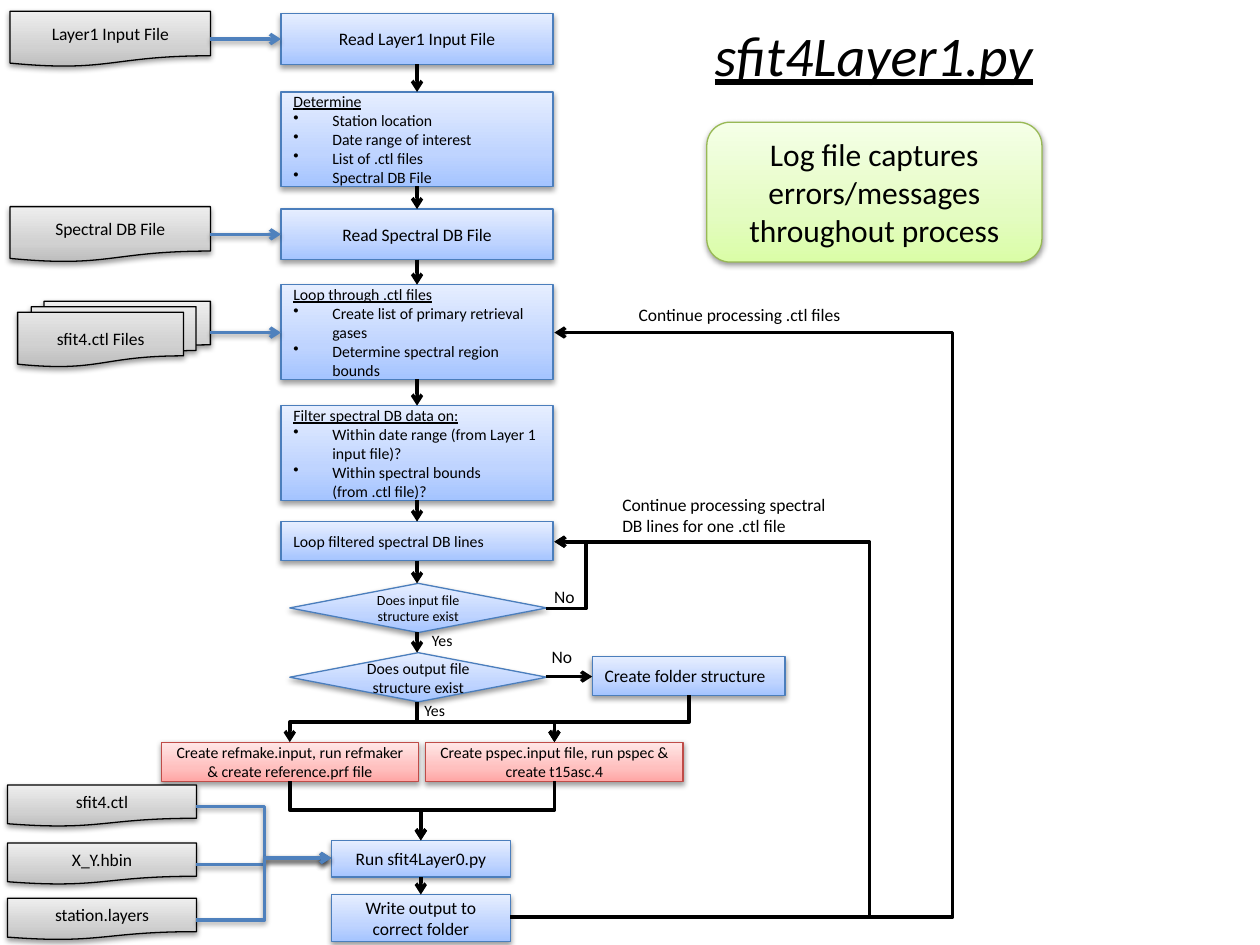
import itertools

import lxml.etree
import pptx
import pptx.dml.color
import pptx.enum.shapes
import pptx.enum.text
import pptx.oxml
import pptx.oxml.ns
import pptx.util

Inches, Pt = pptx.util.Inches, pptx.util.Pt
RGBColor = pptx.dml.color.RGBColor
SHAPE = pptx.enum.shapes.MSO_SHAPE
CONNECTOR = pptx.enum.shapes.MSO_CONNECTOR
ALIGN = pptx.enum.text.PP_ALIGN
qn = pptx.oxml.ns.qn

BLACK = RGBColor(0x00, 0x00, 0x00)
ARROW_BLUE = RGBColor(0x4F, 0x81, 0xBD)
# Each style: outline, then gradient colours from bottom to top
BLUE = (RGBColor(0x4B, 0x7E, 0xBC), RGBColor(0xA4, 0xC4, 0xFF),
        RGBColor(0xBF, 0xD4, 0xFF), RGBColor(0xE6, 0xEE, 0xFF))
GREY = (BLACK, RGBColor(0xBD, 0xBD, 0xBD),
        RGBColor(0xD1, 0xD1, 0xD1), RGBColor(0xEE, 0xEE, 0xEE))
RED = (RGBColor(0xBF, 0x4C, 0x48), RGBColor(0xFF, 0xA6, 0xA5),
       RGBColor(0xFF, 0xC0, 0xBF), RGBColor(0xFF, 0xE7, 0xE7))
GREEN = (RGBColor(0x98, 0xB9, 0x55), RGBColor(0xDA, 0xFD, 0xA7),
         RGBColor(0xE4, 0xFC, 0xC2), RGBColor(0xF5, 0xFF, 0xE7))

NS = 'xmlns:a="http://schemas.openxmlformats.org/drawingml/2006/main"'
SHADOW = (f'<a:effectLst {NS}><a:outerShdw blurRad="40000" dist="20000" dir="5400000" '
          'rotWithShape="0"><a:srgbClr val="000000"><a:alpha val="38000"/></a:srgbClr>'
          '</a:outerShdw></a:effectLst>')
NO_SHADOW = f'<a:effectLst {NS}/>'

deck = pptx.Presentation()
deck.slide_width, deck.slide_height = Inches(10), Inches(7.5)
page = deck.slides.add_slide(deck.slide_layouts[5])


def add_node(kind, style, left, top, width, height, text, size=10,
             align=ALIGN.CENTER, bullets=()):
    """Add a gradient shape; with bullets, its text is an underlined heading."""
    box = page.shapes.add_shape(kind, Inches(left), Inches(top), Inches(width), Inches(height))
    outline, *colours = style
    box.line.color.rgb = outline
    box.line.width = Pt(0.75)
    box.fill.gradient()
    properties = box._element.spPr
    stops = "".join(f'<a:gs pos="{position}"><a:srgbClr val="{colour}"/></a:gs>'
                    for position, colour in zip((0, 35000, 100000), colours))
    gradient = pptx.oxml.parse_xml(
        f'<a:gradFill {NS} rotWithShape="1"><a:gsLst>{stops}</a:gsLst>'
        '<a:lin ang="16200000" scaled="0"/></a:gradFill>')
    properties.replace(properties.find(qn("a:gradFill")), gradient)
    properties.append(pptx.oxml.parse_xml(SHADOW))

    frame = box.text_frame
    frame.vertical_anchor = pptx.enum.text.MSO_ANCHOR.MIDDLE
    frame.text = "\n".join((text, *bullets))
    for index, para in enumerate(frame.paragraphs):
        para.alignment = align
        para.font.name, para.font.size = "Calibri", Pt(size)
        para.font.color.rgb = BLACK
        para.font.underline = bool(bullets) and index == 0
        if index:
            settings = para._p.get_or_add_pPr()
            settings.set("marL", str(Inches(0.31)))
            settings.set("indent", str(-Inches(0.31)))
            bullet = pptx.oxml.parse_xml(f'<a:buChar {NS} char="•"/>')
            settings.insert(0, bullet)


def add_arrow(start, end, colour=BLACK, bend=None, vertical=False):
    """Join two points; bend is where the elbow's middle leg lies."""
    (x1, y1), (x2, y2) = start, end
    kind = CONNECTOR.STRAIGHT if bend is None else CONNECTOR.ELBOW
    share = 0
    if bend is not None:
        share = (bend - y1) / (y2 - y1) if vertical else (bend - x1) / (x2 - x1)
    rotation = 0
    if vertical:
        # A downward elbow is a sideways one turned about its centre
        rotation = 90 if x2 < x1 else 270
        middle_x, middle_y = (x1 + x2) / 2, (y1 + y2) / 2
        half_x, half_y = (y2 - y1) / 2, abs(x2 - x1) / 2
        if rotation == 270:
            half_x = -half_x
        x1, x2 = middle_x - half_x, middle_x + half_x
        y1, y2 = middle_y - half_y, middle_y + half_y
    arrow = page.shapes.add_connector(kind, Inches(x1), Inches(y1), Inches(x2), Inches(y2))
    arrow.line.color.rgb = colour
    arrow.line.width = Pt(2)
    properties = arrow._element.spPr
    if rotation:
        properties.find(qn("a:xfrm")).set("rot", str(rotation * 60000))
    if bend is not None:
        values = properties.find(qn("a:prstGeom")).get_or_add_avLst()
        lxml.etree.SubElement(values, qn("a:gd"), name="adj1", fmla=f"val {round(share * 100000)}")
    lxml.etree.SubElement(properties.find(qn("a:ln")), qn("a:tailEnd"), type="arrow")
    properties.append(pptx.oxml.parse_xml(SHADOW if colour == ARROW_BLUE else NO_SHADOW))


# Title
title = page.shapes.title
title.left, title.top, title.width, title.height = (
    Inches(5.19), Inches(0.11), Inches(3.49), Inches(0.64))
title.text_frame.text = "sfit4Layer1.py"
title.text_frame.auto_size = pptx.enum.text.MSO_AUTO_SIZE.NONE
heading = title.text_frame.paragraphs[0]
heading.alignment = ALIGN.CENTER
heading.font.name, heading.font.size = "Calibri", Pt(32)
heading.font.italic = heading.font.underline = True
heading.font.color.rgb = BLACK

# Main column of steps: top, height, text, size, alignment, bullets
steps = [
    (0.11, 0.4, "Read Layer1 Input File", 10, ALIGN.CENTER, ()),
    (0.73, 0.75, "Determine", 9, ALIGN.LEFT,
     ("Station location", "Date range of interest", "List of .ctl files", "Spectral DB File")),
    (1.66, 0.4, "Read Spectral DB File", 10, ALIGN.CENTER, ()),
    (2.26, 0.75, "Loop through .ctl files", 9, ALIGN.LEFT,
     ("Create list of primary retrieval gases", "Determine spectral region bounds")),
    (3.22, 0.75, "Filter spectral DB data on:", 9, ALIGN.LEFT,
     ("Within date range (from Layer 1 input file)?",
      "Within spectral bounds (from .ctl file)?")),
    (4.14, 0.31, "Loop filtered spectral DB lines", 9, ALIGN.LEFT, ()),
]
for top, height, text, size, align, bullets in steps:
    add_node(SHAPE.FLOWCHART_PROCESS, BLUE, 2.23, top, 2.16, height, text, size, align, bullets)

# Decisions
decisions = [(4.63, 0.39, "Does input file structure exist", 8),
             (5.18, 0.39, "Does output file structure exist", 9)]
for top, height, text, size in decisions:
    add_node(SHAPE.FLOWCHART_DECISION, BLUE, 2.3, top, 2.04, height, text, size)

# Remaining actions
add_node(SHAPE.FLOWCHART_PROCESS, BLUE, 4.7, 5.21, 1.53, 0.31, "Create folder structure",
         align=ALIGN.LEFT)
for left, text in ((1.28, "Create refmake.input, run refmaker & create reference.prf file"),
                   (3.38, "Create pspec.input file, run pspec & create t15asc.4")):
    add_node(SHAPE.FLOWCHART_PROCESS, RED, left, 5.89, 2.04, 0.31, text, 9)
for top, height, text in ((6.67, 0.29, "Run sfit4Layer0.py"),
                          (7.1, 0.37, "Write output to correct folder")):
    add_node(SHAPE.FLOWCHART_PROCESS, BLUE, 2.63, top, 1.42, height, text)

# Input files and the blue arrows they feed
for top, text in ((0.09, "Layer1 Input File"), (1.64, "Spectral DB File")):
    add_node(SHAPE.FLOWCHART_DOCUMENT, GREY, 0.08, top, 1.59, 0.44, text)
add_node(SHAPE.FLOWCHART_MULTIDOCUMENT, GREY, 0.14, 2.39, 1.53, 0.52, "sfit4.ctl Files")
for y in (0.31, 1.86, 2.64):
    add_arrow((1.67, y), (2.23, y), ARROW_BLUE)
for top, text in ((6.23, "sfit4.ctl"), (6.69, "X_Y.hbin"), (7.13, "station.layers")):
    add_node(SHAPE.FLOWCHART_DOCUMENT, GREY, 0.06, top, 1.5, 0.33, text)
    add_arrow((1.56, top + 0.17), (2.63, 6.81), ARROW_BLUE, bend=2.1)

# Arrows down the main column
for upper, lower in itertools.pairwise(steps + decisions):
    add_arrow((3.31, upper[0] + upper[1]), (3.31, lower[0]))
add_arrow((3.34, 6.96), (3.34, 7.1))

# Branches and merges
add_arrow((4.33, 5.37), (4.7, 5.37))
for start, end, bend in (((3.31, 5.57), (4.4, 5.89), 5.73),
                         ((3.31, 5.57), (2.3, 5.89), 5.73),
                         ((5.47, 5.52), (4.4, 5.89), 5.73),
                         ((2.3, 6.2), (3.34, 6.67), 6.43),
                         ((4.4, 6.2), (3.34, 6.67), 6.43)):
    add_arrow(start, end, bend=bend, vertical=True)

# Loops back
for start, end, bend in (((4.33, 4.83), (4.4, 4.3), 4.65),
                         ((4.05, 7.28), (4.4, 2.64), 7.56),
                         ((4.05, 7.28), (4.4, 4.3), 6.9)):
    add_arrow(start, end, bend=bend)

# Labels on arrows
for left, top, width, height, text, size in (
        (4.3, 4.6, 0.38, 0.27, "No", 10), (3.33, 4.96, 0.41, 0.25, "Yes", 9),
        (4.28, 5.08, 0.44, 0.27, "No", 10), (3.27, 5.51, 0.41, 0.25, "Yes", 9),
        (4.84, 3.87, 1.85, 0.44, "Continue processing spectral DB lines for one .ctl file", 10),
        (4.97, 2.36, 1.85, 0.27, "Continue processing .ctl files", 10)):
    label = page.shapes.add_textbox(Inches(left), Inches(top), Inches(width), Inches(height))
    label.text_frame.word_wrap = True
    label.text_frame.text = text
    para = label.text_frame.paragraphs[0]
    para.font.name, para.font.size = "Calibri", Pt(size)
    para.font.color.rgb = BLACK

# Log note
add_node(SHAPE.ROUNDED_RECTANGLE, GREEN, 5.61, 0.97, 2.66, 1.11,
         "Log file captures errors/messages throughout process", 18)

deck.save("out.pptx")
